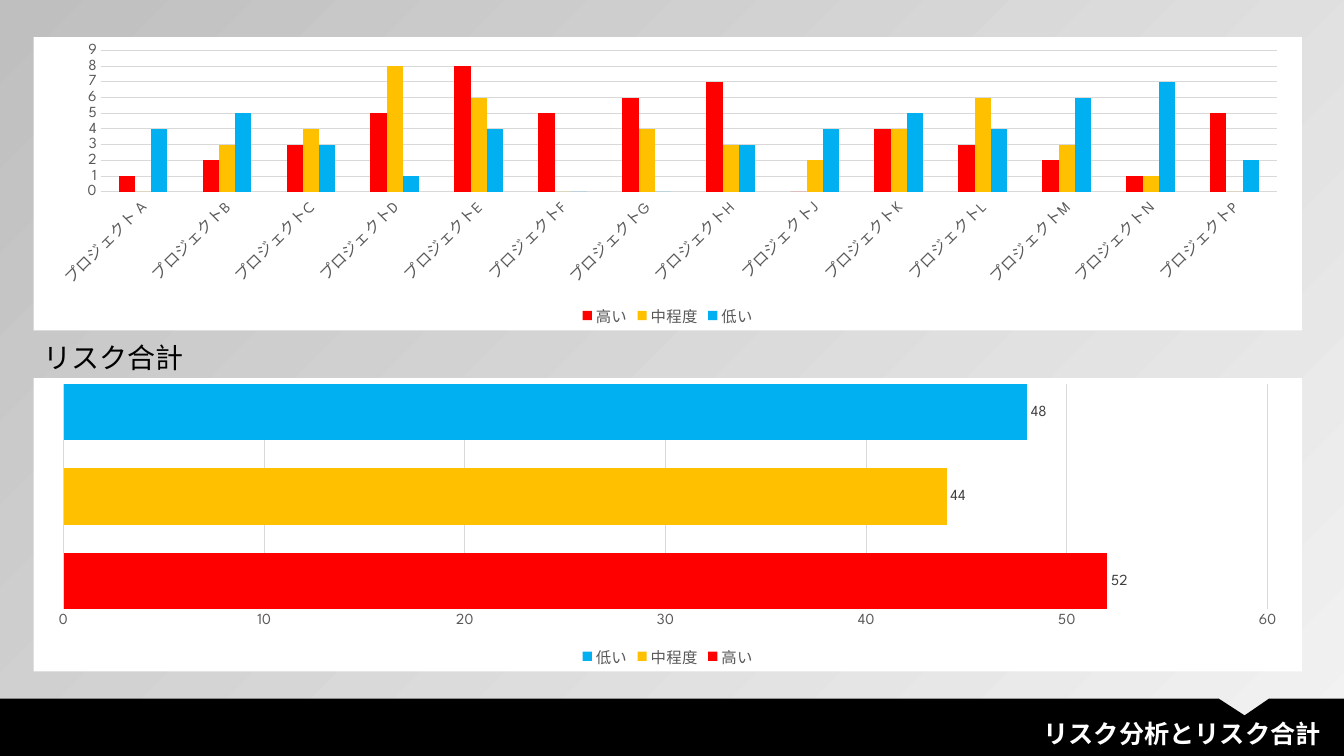
from lxml import etree
from pptx import Presentation
from pptx.chart.data import CategoryChartData
from pptx.dml.color import RGBColor
from pptx.enum.chart import XL_CHART_TYPE as CT, XL_LABEL_POSITION as LP
from pptx.enum.chart import XL_LEGEND_POSITION as LEG, XL_TICK_MARK as TICK
from pptx.enum.text import MSO_AUTO_SIZE as AUTO, PP_ALIGN as AL
from pptx.oxml import parse_xml
from pptx.oxml.ns import nsdecls, qn
from pptx.util import Pt

COLORS = {
    "black": "000000", "white": "FFFFFF", "grid": "D9D9D9",
    "axis": "595959", "label": "404040", "light": "F2F2F2", "dark": "BFBFBF",
    "高い": "FF0000", "中程度": "FFC000", "低い": "00B0F0",
}
RISKS = {
    "高い": [1, 2, 3, 5, 8, 5, 6, 7, 0, 4, 3, 2, 1, 5],
    "中程度": [0, 3, 4, 8, 6, 0, 4, 3, 2, 4, 6, 3, 1, 0],
    "低い": [4, 5, 3, 1, 4, 0, 0, 3, 4, 5, 4, 6, 7, 2],
}
PROJECTS = ["プロジェクト A"] + [f"プロジェクト{c}" for c in "BCDEFGHJKLMNP"]
TOTALS = {name: [sum(vals)] for name, vals in RISKS.items()}


def rgb(name):
    return RGBColor.from_string(COLORS[name])


def set_font(font, color, size=11, **extra):
    for key, value in {"name": "League Spartan", "size": Pt(size), **extra}.items():
        setattr(font, key, value)
    font.color.rgb = rgb(color)


prs = Presentation()
prs.slide_width, prs.slide_height = Pt(960), Pt(540)
s = prs.slides.add_slide(prs.slide_layouts[6])

bg = s.background.fill
bg.gradient()
bg.gradient_angle = 135
for stop, color in zip(bg.gradient_stops, ["light", "dark"]):
    stop.color.rgb = rgb(color)

fb = s.shapes.build_freeform(Pt(0), Pt(499))
fb.add_line_segments(
    [(Pt(x), Pt(y)) for x, y in
     [(870.5, 499), (889, 511), (906.5, 499), (960, 499), (960, 540), (0, 540)]])
footer = fb.convert_to_shape()
footer.shadow.inherit = False
footer.fill.solid()
footer.fill.fore_color.rgb = rgb("black")
footer.line.fill.background()

charts = [
    (CT.COLUMN_CLUSTERED, 26.6, PROJECTS, RISKS, 219, 0),
    (CT.BAR_CLUSTERED, 270, ["1"], TOTALS, 0, -50),
]
for kind, top, cats, series, gap, overlap in charts:
    data = CategoryChartData(number_format="0")
    data.categories = cats
    for name, vals in series.items():
        data.add_series(name, vals)
    chart = s.shapes.add_chart(kind, Pt(24), Pt(top), Pt(906), Pt(209.5), data).chart
    chart.has_title = False
    set_font(chart.font, "black")
    chart.has_legend = True
    chart.legend.position = LEG.BOTTOM
    chart.legend.include_in_layout = False
    set_font(chart.legend.font, "axis")

    cat, val = chart.category_axis, chart.value_axis
    for axis in (cat, val):
        axis.major_tick_mark = axis.minor_tick_mark = TICK.NONE
        set_font(axis.tick_labels.font, "axis")
    val.minimum_scale = 0
    val.tick_labels.number_format = "0"
    val.tick_labels.number_format_is_linked = False
    val.format.line.fill.background()
    for line in (cat.format.line, val.major_gridlines.format.line):
        line.color.rgb = rgb("grid")
        line.width = Pt(0.75)

    plot = chart.plots[0]
    plot.vary_by_categories = False
    plot.gap_width, plot.overlap = gap, overlap
    for ser in plot.series:
        ser.format.fill.solid()
        ser.format.fill.fore_color.rgb = rgb(ser.name)
        ser.invert_if_negative = False

    space = chart.element if hasattr(chart, "element") else chart._chartSpace
    panel = parse_xml(f'<c:spPr {nsdecls("c", "a")}/>')
    solid = etree.SubElement(panel, qn("a:solidFill"))
    etree.SubElement(solid, qn("a:srgbClr"), val=COLORS["white"])
    etree.SubElement(etree.SubElement(panel, qn("a:ln")), qn("a:noFill"))
    space.find(qn("c:chart")).addnext(panel)

    if kind == CT.COLUMN_CLUSTERED:
        body = space.find(f'.//{qn("c:catAx")}/{qn("c:txPr")}/{qn("a:bodyPr")}')
        body.set("rot", "-2700000")
    else:
        cat.visible = False
        for ser in plot.series:
            labels = ser.data_labels
            options = {"show_value": True, "number_format": "0",
                       "number_format_is_linked": False, "position": LP.OUTSIDE_END}
            for key, value in options.items():
                setattr(labels, key, value)
            set_font(labels.font, "label")

texts = [
    ("リスク分析とリスク合計", (298, 509.8, 652.4, 29), 18, "white", True, AL.RIGHT, True),
    ("リスク合計", (24, 239.8, 118, 31.5), 20, "black", False, AL.LEFT, False),
]
for text, box, size, color, bold, align, wrap in texts:
    tf = s.shapes.add_textbox(*[Pt(v) for v in box]).text_frame
    tf.word_wrap = wrap
    tf.auto_size = AUTO.SHAPE_TO_FIT_TEXT
    p = tf.paragraphs[0]
    p.alignment = align
    r = p.add_run()
    r.text = text
    set_font(r.font, color, size, bold=bold)

prs.save("out.pptx")
